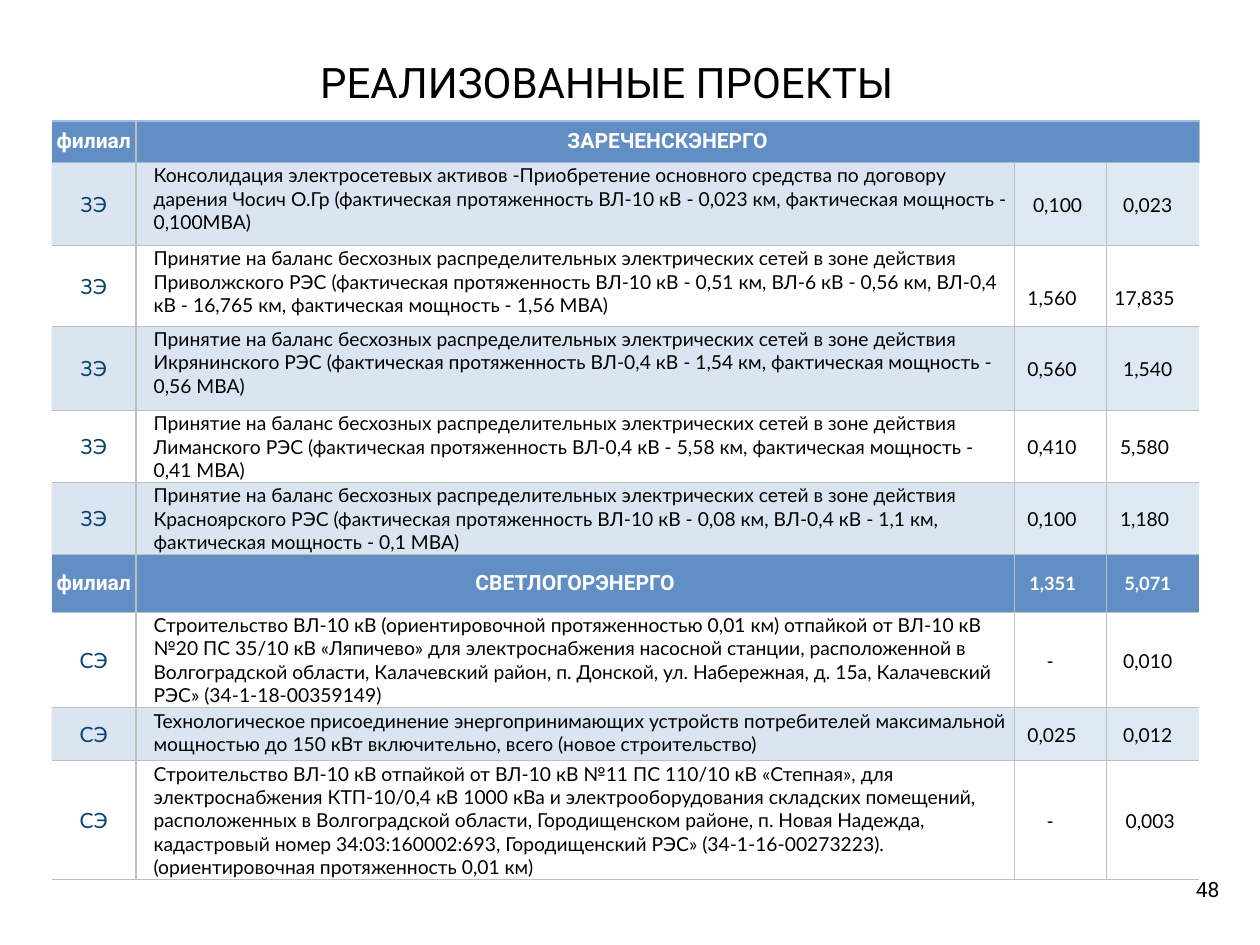
import pptx
import pptx.dml.color
import pptx.enum.text
import pptx.oxml
import pptx.util
import lxml.etree

Inches = pptx.util.Inches
ALIGN = pptx.enum.text.PP_ALIGN
ANCHOR = pptx.enum.text.MSO_ANCHOR
NAMESPACE = "http://schemas.openxmlformats.org/drawingml/2006/main"

BLACK, WHITE, NAVY = "000000", "FFFFFF", "0B436F"
HEADER_BLUE, TINT_BLUE, NUMBER_BLUE = "618FC5", "4F81BD", "DFE9F3"
GREY_LINE, BLUE_LINE = "BFBFBF", "A0BCDC"

COLUMN_WIDTHS = [0.67, 6.97, 0.73, 0.74]
ROW_HEIGHTS = [0.33, 0.66, 0.64, 0.67, 0.57, 0.57, 0.46, 0.76, 0.42, 0.94]
NETWORKS = "Принятие на баланс бесхозных распределительных электрических сетей в зоне действия "

FIRST_BRANCH = [
    ("Консолидация электросетевых активов -Приобретение основного средства по договору дарения "
     "Чосич О.Гр (фактическая протяженность ВЛ-10 кВ - 0,023 км, фактическая мощность - 0,100МВА)",
     ("0,100", 0.05), ("0,023", 0.09)),
    (NETWORKS + "Приволжского РЭС (фактическая протяженность ВЛ-10 кВ - 0,51 км, "
     "ВЛ-6 кВ - 0,56 км, ВЛ-0,4 кВ - 16,765 км, фактическая мощность - 1,56 МВА)",
     ("1,560", 0.14, 0.19), ("17,835", 0.14, 0.19)),
    (NETWORKS + "Икрянинского РЭС (фактическая протяженность ВЛ-0,4 кВ - 1,54 км, "
     "фактическая мощность - 0,56 МВА)", ("0,560", 0.14), ("1,540", 0.09)),
    (NETWORKS + "Лиманского РЭС (фактическая протяженность ВЛ-0,4 кВ - 5,58 км, "
     "фактическая мощность - 0,41 МВА)", ("0,410", 0.14), ("5,580", 0.14)),
    (NETWORKS + "Красноярского РЭС (фактическая протяженность ВЛ-10 кВ - 0,08 км, "
     "ВЛ-0,4 кВ - 1,1 км, фактическая мощность - 0,1 МВА)", ("0,100", 0.14), ("1,180", 0.14)),
]
SECOND_BRANCH = [
    ("Строительство ВЛ-10 кВ (ориентировочной протяженностью 0,01 км) отпайкой от ВЛ-10 кВ №20 "
     "ПС 35/10 кВ «Ляпичево» для электроснабжения насосной станции, расположенной в Волгоградской "
     "области, Калачевский район, п. Донской, ул. Набережная, д. 15а, Калачевский РЭС» "
     "(34-1-18-00359149)", ("-", 0.17), ("0,010", 0.09)),
    ("Технологическое присоединение энергопринимающих устройств потребителей максимальной "
     "мощностью до 150 кВт включительно, всего (новое строительство)",
     ("0,025", 0.14), ("0,012", 0.09)),
    ("Строительство ВЛ-10 кВ отпайкой от ВЛ-10 кВ №11 ПС 110/10 кВ «Степная», для "
     "электроснабжения КТП-10/0,4 кВ 1000 кВа и электрооборудования складских помещений, "
     "расположенных в Волгоградской области, Городищенском районе, п. Новая Надежда, кадастровый "
     "номер 34:03:160002:693, Городищенский РЭС» (34-1-16-00273223). "
     "(ориентировочная протяженность 0,01 км)", ("-", 0.17), ("0,003", 0.05)),
]


def rgb(color):
    return pptx.dml.color.RGBColor.from_string(color)


def write(frame, text, size=11, font="Lato", color=BLACK, bold=False, align=ALIGN.LEFT):
    para = frame.paragraphs[0]
    para.alignment = align
    span = para.add_run()
    span.text = text
    span.font.size = pptx.util.Pt(size)
    span.font.name = font
    span.font.bold = bold
    span.font.color.rgb = rgb(color)


def add_text(page, left, top, width, height, text, wrap=True, **text_format):
    box = page.shapes.add_textbox(Inches(left), Inches(top), Inches(width), Inches(height))
    frame = box.text_frame
    frame.word_wrap = wrap
    frame.margin_left = frame.margin_right = Inches(0.05)
    frame.margin_top = frame.margin_bottom = Inches(0.05)
    write(frame, text, font="Roboto", **text_format)


def add_border(cell, side, color):
    if color:
        paint = f'<a:solidFill><a:srgbClr val="{color}"/></a:solidFill>'
    else:
        paint = "<a:noFill/>"
    width = pptx.util.Pt(0.75)
    line = f'<a:ln{side} xmlns:a="{NAMESPACE}" w="{width}">{paint}</a:ln{side}>'
    cell._tc.get_or_add_tcPr().append(pptx.oxml.parse_xml(line))


def add_borders(table):
    for row in range(len(ROW_HEIGHTS)):
        for column in range(len(COLUMN_WIDTHS)):
            cell = table.cell(row, column)
            add_border(cell, "L", GREY_LINE if column > 0 else None)
            add_border(cell, "R", GREY_LINE if column < 3 else None)
            add_border(cell, "T", BLUE_LINE if row < 2 else GREY_LINE)
            add_border(cell, "B", BLUE_LINE if row < 1 else GREY_LINE)


def fill_cell(cell, color, alpha=None):
    if color is None:
        cell.fill.background()
        return
    cell.fill.solid()
    cell.fill.fore_color.rgb = rgb(color)
    if alpha:
        paint = cell._tc.tcPr.find(f".//{{{NAMESPACE}}}solidFill/{{{NAMESPACE}}}srgbClr[@val='{color}']/..")
        paint = cell._tc.tcPr.findall(f"{{{NAMESPACE}}}solidFill")[-1][0]
        lxml.etree.SubElement(paint, f"{{{NAMESPACE}}}alpha", val=str(alpha * 1000))


def write_cell(cell, text, margins=(0.02, 0, 0.02, 0), anchor=ANCHOR.MIDDLE,
               align=ALIGN.CENTER, **text_format):
    left, top, right, bottom = margins
    cell.margin_left, cell.margin_top = Inches(left), Inches(top)
    cell.margin_right, cell.margin_bottom = Inches(right), Inches(bottom)
    cell.vertical_anchor = anchor
    write(cell.text_frame, text, align=align, **text_format)


def write_number(cell, text, right, top=0.01, **text_format):
    write_cell(cell, text, margins=(0.01, top, right, 0), **text_format)


def write_heading(table, row, branch, totals=()):
    for column in range(len(COLUMN_WIDTHS)):
        fill_cell(table.cell(row, column), HEADER_BLUE)
    for column, text in enumerate(("филиал", branch)):
        write_cell(table.cell(row, column), text, size=12, font="Roboto", color=WHITE, bold=True)
    for column, total in enumerate(totals, 2):
        write_number(table.cell(row, column), *total, size=10.5, color=WHITE, bold=True)


def write_projects(table, first_row, code, projects):
    for row, (description, *numbers) in enumerate(projects, first_row):
        shaded = row % 2 == 1 if row < 6 else row % 2 == 0
        for column in range(len(COLUMN_WIDTHS)):
            cell = table.cell(row, column)
            if not shaded:
                fill_cell(cell, None)
            elif column < 2:
                fill_cell(cell, TINT_BLUE, alpha=20)
            else:
                fill_cell(cell, NUMBER_BLUE)
        write_cell(table.cell(row, 0), code, size=12, color=NAVY)
        write_cell(table.cell(row, 1), description, margins=(0.14, 0.01, 0.01, 0),
                   anchor=ANCHOR.TOP, align=ALIGN.LEFT)
        for column, number in enumerate(numbers, 2):
            write_number(table.cell(row, column), *number)


def add_project_table(page):
    table = page.shapes.add_table(
        len(ROW_HEIGHTS), len(COLUMN_WIDTHS), Inches(0.41), Inches(0.96),
        Inches(sum(COLUMN_WIDTHS)), Inches(sum(ROW_HEIGHTS))).table
    table.first_row = table.horz_banding = False
    for column, width in zip(table.columns, COLUMN_WIDTHS):
        column.width = Inches(width)
    for row, height in zip(table.rows, ROW_HEIGHTS):
        row.height = Inches(height)
    table.cell(0, 1).merge(table.cell(0, 3))
    add_borders(table)
    write_heading(table, 0, "ЗАРЕЧЕНСКЭНЕРГО")
    write_projects(table, 1, "ЗЭ", FIRST_BRANCH)
    write_heading(table, 6, "СВЕТЛОГОРЭНЕРГО", [("1,351", 0.13), ("5,071", 0.09)])
    write_projects(table, 7, "СЭ", SECOND_BRANCH)


def main():
    deck = pptx.Presentation()
    deck.slide_width, deck.slide_height = Inches(10), Inches(7.5)
    page = deck.slides.add_slide(deck.slide_layouts[6])
    add_text(page, 9.44, 6.91, 0.29, 0.3, "48", wrap=False, size=12)
    add_text(page, 2.49, 0.4, 6.02, 0.38, "РЕАЛИЗОВАННЫЕ ПРОЕКТЫ", size=24)
    add_project_table(page)
    deck.save("out.pptx")


if __name__ == "__main__":
    main()
